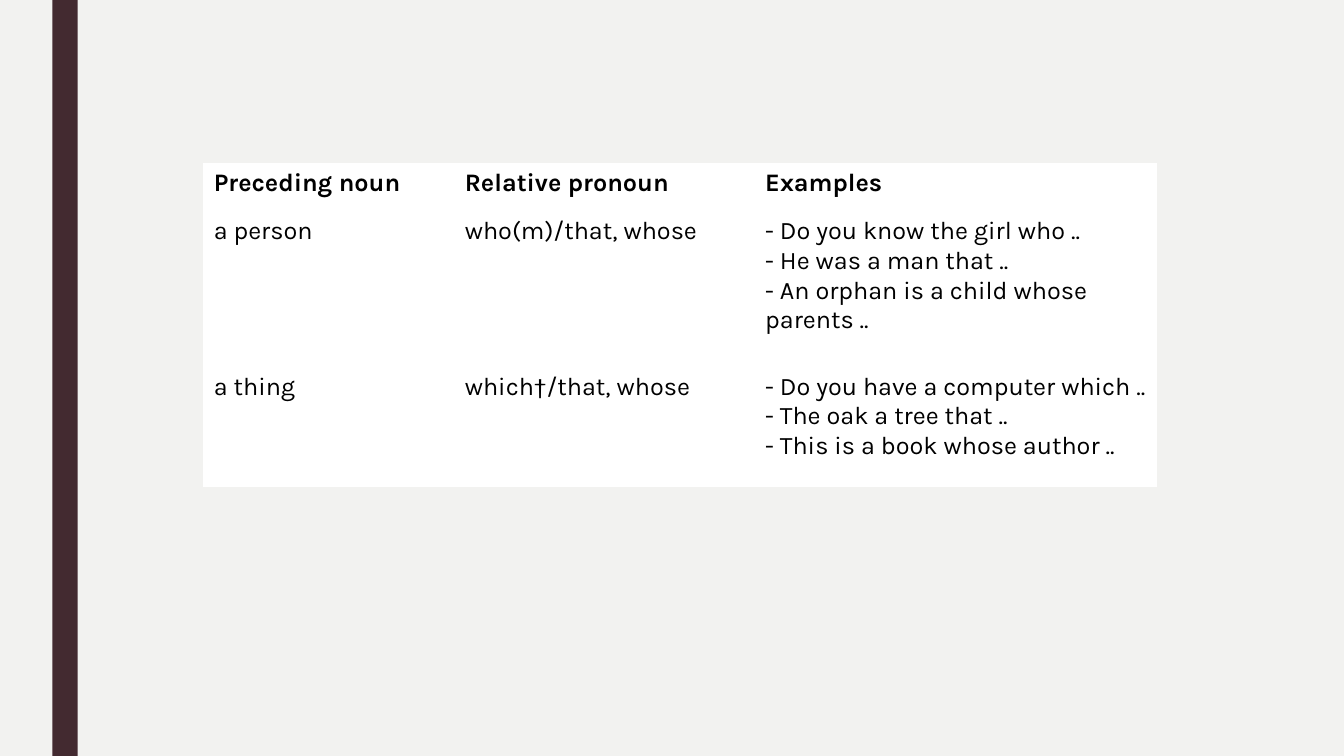
from pptx import Presentation
from pptx.dml.color import RGBColor
from pptx.enum.shapes import MSO_SHAPE
from pptx.util import Inches, Pt

ROWS = [
    ("Preceding noun", "Relative pronoun", "Examples"),
    ("a person", "who(m)/that, whose",
     "- Do you know the girl who ..\n"
     "- He was a man that ..\n"
     "- An orphan is a child whose parents .."),
    ("a thing", "which†/that, whose",
     "- Do you have a computer which ..\n"
     "- The oak a tree that ..\n"
     "- This is a book whose author .."),
]
COLUMN_WIDTHS = (2.49, 2.98, 3.98)
ROW_HEIGHTS = (0.48, 1.54, 1.19)
TABLE_LEFT, TABLE_TOP = 2.02, 1.62

BACKGROUND = RGBColor(0xF2, 0xF2, 0xF0)
STRIPE = RGBColor(0x43, 0x2A, 0x30)
WHITE = RGBColor(0xFF, 0xFF, 0xFF)
BLACK = RGBColor(0x00, 0x00, 0x00)


def fill_solid(target, color):
    target.fill.solid()
    target.fill.fore_color.rgb = color


def write_text(frame, text, size=18, bold=False, color=BLACK, font="Karla"):
    """Put text in one paragraph; each newline becomes a line break."""
    para = frame.paragraphs[0]
    para.text = text
    for span in para.runs:
        span.font.name = font
        span.font.size = Pt(size)
        span.font.bold = bold
        span.font.color.rgb = color


def add_stripe(page):
    stripe = page.shapes.add_shape(
        MSO_SHAPE.RECTANGLE, Inches(0.52), 0, Inches(0.25), Inches(7.5))
    stripe.shadow.inherit = False
    fill_solid(stripe, STRIPE)
    stripe.line.fill.background()


def add_pronoun_table(page):
    table = page.shapes.add_table(
        len(ROWS), len(COLUMN_WIDTHS), Inches(TABLE_LEFT), Inches(TABLE_TOP),
        Inches(sum(COLUMN_WIDTHS)), Inches(sum(ROW_HEIGHTS))).table
    table.horz_banding = False
    table.first_row = False
    for column, width in zip(table.columns, COLUMN_WIDTHS):
        column.width = Inches(width)
    for index, (row, height) in enumerate(zip(table.rows, ROW_HEIGHTS)):
        row.height = Inches(height)
        for cell, text in zip(row.cells, ROWS[index]):
            fill_solid(cell, WHITE)
            write_text(cell.text_frame, text, bold=index == 0)


def main():
    deck = Presentation()
    deck.slide_width, deck.slide_height = Inches(13.33), Inches(7.5)
    page = deck.slides.add_slide(deck.slide_layouts[6])
    fill_solid(page.background, BACKGROUND)
    add_stripe(page)
    add_pronoun_table(page)
    deck.save("out.pptx")


if __name__ == "__main__":
    main()
